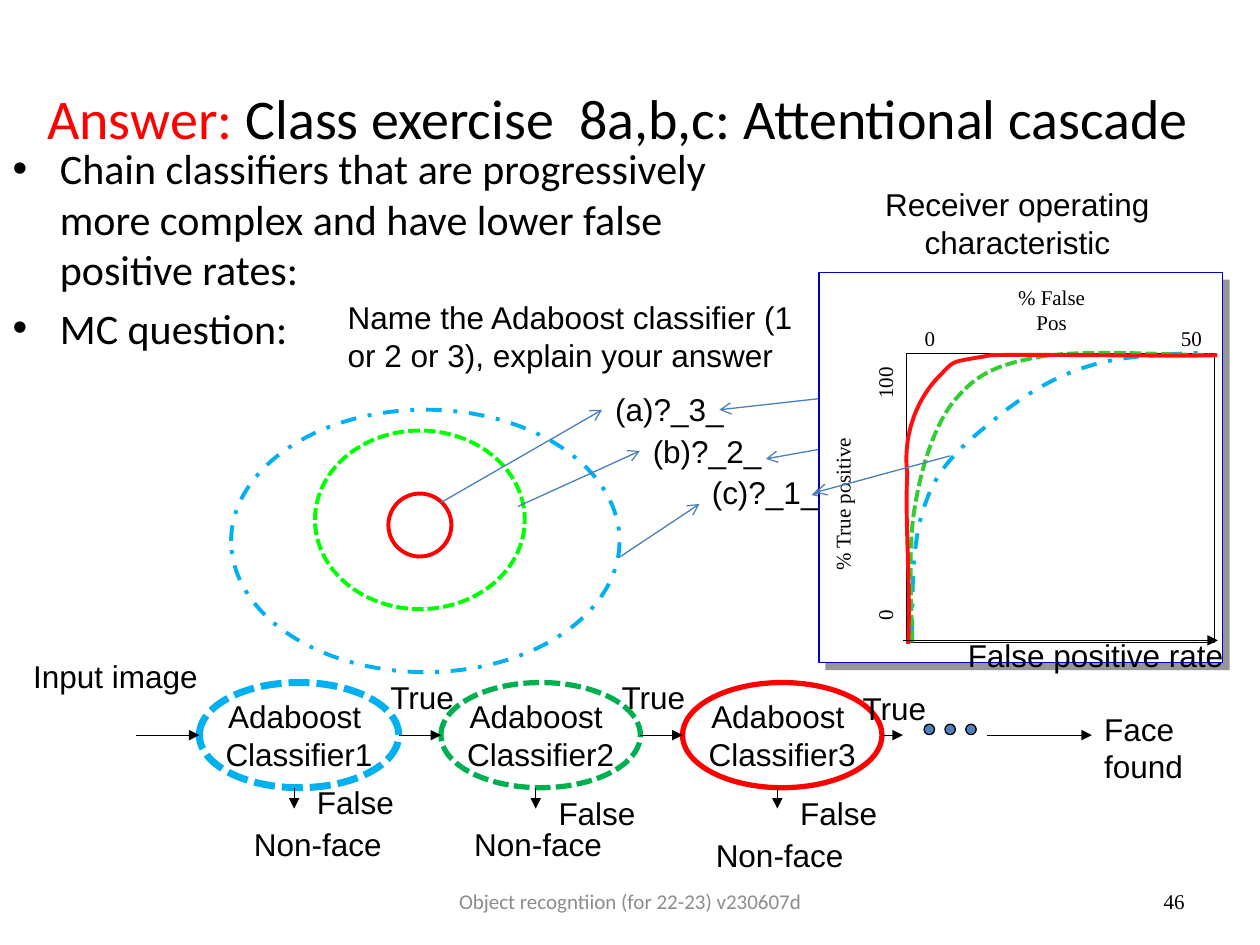
from dataclasses import dataclass
from lxml import etree
from pptx import Presentation
from pptx import util as u
from pptx.dml.color import RGBColor
from pptx.enum import dml, shapes, text
from pptx.oxml import ns


@dataclass(frozen=True)
class Theme:
    sans: str = "Arial"
    head: str = "Calibri"
    serif: str = "Times New Roman"
    big: int = 32
    body: int = 24
    label: int = 18
    small: int = 12
    black: str = "000000"
    white: str = "FFFFFF"
    red: str = "FF0000"
    sky: str = "00B0F0"
    green: str = "00B050"
    lime: str = "00FF00"
    leaf: str = "33CC33"
    rose: str = "FF0F0F"
    blue: str = "4B7EBC"
    dot: str = "4F81BD"
    frame: str = "0000CC"
    shade: str = "969696"
    grey: str = "8C8C8C"


T = Theme()
DASH, DOTS = dml.MSO_LINE.SQUARE_DOT, dml.MSO_LINE.DASH_DOT
OVAL, RECT = shapes.MSO_SHAPE.OVAL, shapes.MSO_SHAPE.RECTANGLE
LEFT, MID, RIGHT = text.PP_ALIGN.LEFT, text.PP_ALIGN.CENTER, text.PP_ALIGN.RIGHT


def cms(vals):
    return [u.Cm(v) for v in vals]


def add_run(para, words, size, font, color):
    run = para.add_run()
    run.text = words
    run.font.size, run.font.name = u.Pt(size), font
    run.font.color.rgb = RGBColor.from_string(color)


def fill_text(frame, lines, size=T.label, font=T.sans, color=T.black, align=LEFT):
    for i, words in enumerate(lines):
        para = frame.add_paragraph() if i else frame.paragraphs[0]
        para.alignment = align
        add_run(para, words, size, font, color)


def add_text(slide, box, words, wrap=False, mid=False, **style):
    item = slide.shapes.add_textbox(*cms(box))
    frame = item.text_frame
    frame.word_wrap = wrap
    if mid:
        frame.vertical_anchor = text.MSO_ANCHOR.MIDDLE
    fill_text(frame, words.split("\n"), **style)
    return item


def add_tick(slide, box, words, turn=0, align=MID):
    item = add_text(slide, box, words, wrap=True, size=T.small, font=T.serif, align=align)
    frame = item.text_frame
    frame.margin_left = frame.margin_right = frame.margin_top = frame.margin_bottom = 0
    item.rotation = turn
    return item


def add_tab(item, stop):
    """Set one right tab stop in the first paragraph."""
    props = item.text_frame.paragraphs[0]._p.get_or_add_pPr()
    tabs = etree.SubElement(props, ns.qn("a:tabLst"))
    etree.SubElement(tabs, ns.qn("a:tab"), pos=str(u.Cm(stop)), algn="r")


def set_style(item, fill, line, width, dash):
    item.shadow.inherit = False
    if fill:
        item.fill.solid()
        item.fill.fore_color.rgb = RGBColor.from_string(fill)
    else:
        item.fill.background()
    if line:
        item.line.color.rgb = RGBColor.from_string(line)
        item.line.width = u.Pt(width)
        if dash:
            item.line.dash_style = dash
    else:
        item.line.fill.background()


def add_form(slide, kind, box, fill=None, line=None, width=0.75, dash=None):
    item = slide.shapes.add_shape(kind, *cms(box))
    set_style(item, fill, line, width, dash)
    return item


def add_arrow(slide, ends, color=T.black, head="triangle"):
    item = slide.shapes.add_connector(shapes.MSO_CONNECTOR.STRAIGHT, *cms(ends))
    item.line.color.rgb = RGBColor.from_string(color)
    item.line.width = u.Pt(0.75)
    etree.SubElement(item.line._get_or_add_ln(), ns.qn("a:tailEnd"), type=head)
    etree.SubElement(item._element.spPr, ns.qn("a:effectLst"))


def add_curve(slide, knots, color, dash=None):
    """Draw joined cubic curves; every third knot lies on the line."""
    pen = slide.shapes.build_freeform(*cms(knots[0]))
    pen.add_line_segments([cms(k) for k in knots[1:]], close=False)
    item = pen.convert_to_shape()
    set_style(item, None, color, 2.25, dash)
    # Join each three straight steps into one cubic step
    steps = list(item._element.iter(ns.qn("a:lnTo")))
    for i in range(0, len(steps), 3):
        cubic = etree.Element(ns.qn("a:cubicBezTo"))
        steps[i].addprevious(cubic)
        for step in steps[i:i + 3]:
            cubic.append(step[0])
            step.getparent().remove(step)


def add_head(slide):
    title, body = slide.placeholders[0], slide.placeholders[1]
    title.left, title.top, title.width, title.height = cms((0, 0.77, 24.92, 3.18))
    para = title.text_frame.paragraphs[0]
    add_run(para, "Answer: ", T.big, T.head, T.red)
    add_run(para, "Class exercise  8a,b,c: Attentional cascade", T.big, T.head, T.black)
    body.left, body.top, body.width, body.height = cms((0, 2.75, 15.44, 5.71))
    fill_text(body.text_frame, [
        "Chain classifiers that are progressively more complex and "
        "have lower false positive rates:", "MC question:"], T.body, T.head)


def add_chain(slide):
    step, mid = 4.87, 14.82
    looks = ((T.sky, 4, DASH), (T.green, 3, DASH), (T.red, 3, None))
    for i, (color, width, dash) in enumerate(looks):
        item = add_form(slide, OVAL, (4.02 + i * step, 13.76, 4.02, 2.12),
                        line=color, width=width, dash=dash)
        item.text_frame.word_wrap = False
        fill_text(item.text_frame, ["Adaboost ", f"Classifier{i + 1}"], align=MID)
        down = 5.93 + i * step
        add_arrow(slide, (down, 15.88, down, 16.3))
    for start, end in ((2.75, 4.02), (8.04, 8.89), (12.91, 13.76),
                       (17.78, 18.2), (19.9, 22.01)):
        add_arrow(slide, (start, mid, end, mid))
    for i in range(3):
        add_form(slide, OVAL, (18.63 + i * 0.42, 14.6, 0.21, 0.21), T.dot, T.black)
    marks = {
        ("True", 1.83, 1.02): ((7.62, 13.55), (12.28, 13.55), (17.14, 13.76)),
        ("False", 2.06, 1.02): ((6.14, 15.66), (11.01, 15.88), (15.88, 15.88)),
        ("Non-face", 3.1, 1.02): ((4.87, 16.51), (9.31, 16.51), (14.18, 16.72)),
        ("Input image", 3.84, 1.78): ((0.42, 13.12),),
        ("Face\nfound", 2.11, 1.78): ((22.01, 14.18),),
    }
    for (words, wide, high), spots in marks.items():
        for x, y in spots:
            add_text(slide, (x, y, wide, high), words)


def add_quiz(slide):
    add_text(slide, (6.76, 5.88, 9.47, 1.8),
             "Name the Adaboost classifier (1 or 2 or 3), explain your answer", wrap=True)
    for words, x, y in (("(a)?_3_", 12.15, 7.74), ("(b)?_2_", 12.91, 8.59),
                        ("(c)?_1_", 14.1, 9.42)):
        add_text(slide, (x, y, 2.7, 1.02), words)
    for box, color, dash in (((7.83, 9.95, 1.27, 1.27), T.red, None),
                             ((6.35, 8.68, 4.23, 3.6), T.lime, DASH),
                             ((4.66, 8.26, 7.83, 5.29), T.sky, DOTS)):
        add_form(slide, OVAL, box, line=color, width=2.25, dash=dash)
    for ends in ((8.89, 10.13, 12.14, 8.26), (10.44, 10.21, 12.9, 9.09),
                 (12.49, 11.23, 14.1, 10.16), (18.64, 7.8, 14.5, 8.26),
                 (18.85, 8.64, 15.44, 9.25), (18.72, 9.25, 16.36, 9.98)):
        add_arrow(slide, ends, T.blue, "arrow")


def add_plot(slide):
    add_text(slide, (16.47, 3.6, 8.08, 1.78), "Receiver operating characteristic",
             wrap=True, align=MID)
    # Panel with its shade, then the plot frame
    add_form(slide, RECT, (16.64, 5.64, 8.15, 7.87), T.shade)
    add_form(slide, RECT, (16.51, 5.5, 8.13, 7.85), T.white, T.frame)
    add_form(slide, RECT, (18.27, 7.13, 6.22, 5.82), line=T.black)
    # Axis names and ticks
    add_tick(slide, (20.25, 5.74, 1.9, 0.51), "% False Pos")
    add_tick(slide, (15.62, 9.91, 2.72, 0.51), "% True positive", 270)
    add_tick(slide, (18.64, 6.56, 4.34, 0.51), "0", align=LEFT)
    add_tick(slide, (23.7, 6.56, 0.53, 0.51), "50", align=RIGHT)
    side = add_tick(slide, (15.27, 9.68, 5.13, 0.51), "0\t100", 270, LEFT)
    add_tab(side, 5.1)
    # One curve for each classifier
    add_curve(slide, [
        (18.39, 12.8), (18.39, 11.81), (18.39, 10.82), (18.67, 10.11), (18.92, 9.37),
        (19.48, 8.92), (20.02, 8.48), (20.55, 8.03), (21.18, 7.62), (21.92, 7.39),
        (22.63, 7.16), (23.5, 7.14), (24.36, 7.11)], T.sky, DOTS)
    add_curve(slide, [
        (18.39, 12.95), (18.39, 12.5), (18.29, 11.05), (18.44, 10.24), (18.57, 9.42),
        (18.85, 8.51), (19.28, 8.03), (19.71, 7.52), (20.14, 7.34), (20.98, 7.19),
        (21.84, 7.04), (23.67, 7.16), (24.38, 7.16)], T.leaf, DASH)
    add_curve(slide, [
        (18.31, 12.98), (18.36, 11.71), (18.24, 10.52), (18.29, 9.55), (18.19, 8.69),
        (18.54, 8), (18.9, 7.62), (19.28, 7.24), (19.08, 7.32), (19.99, 7.16),
        (20.98, 7.14), (23.88, 7.19), (24.54, 7.16)], T.rose)
    add_text(slide, (19.26, 12.7, 5.66, 1.02), "False positive rate")
    add_arrow(slide, (18.21, 12.91, 24.55, 12.91))
    add_arrow(slide, (19.15, 9.19, 16.43, 9.93), T.blue, "arrow")


def add_foot(slide):
    add_text(slide, (8.68, 17.65, 8.05, 1.02), "Object recogntiion (for 22-23) v230607d",
             wrap=True, mid=True, size=T.small, font=T.head, color=T.grey, align=MID)
    add_text(slide, (18.2, 17.65, 5.93, 1.02), "46",
             wrap=True, mid=True, size=T.small, font=T.serif, align=RIGHT)


def main():
    deck = Presentation()
    deck.slide_width, deck.slide_height = cms((25.4, 19.05))
    slide = deck.slides.add_slide(deck.slide_layouts[1])
    for part in (add_foot, add_head, add_chain, add_quiz, add_plot):
        part(slide)
    deck.save("out.pptx")


if __name__ == "__main__":
    main()
